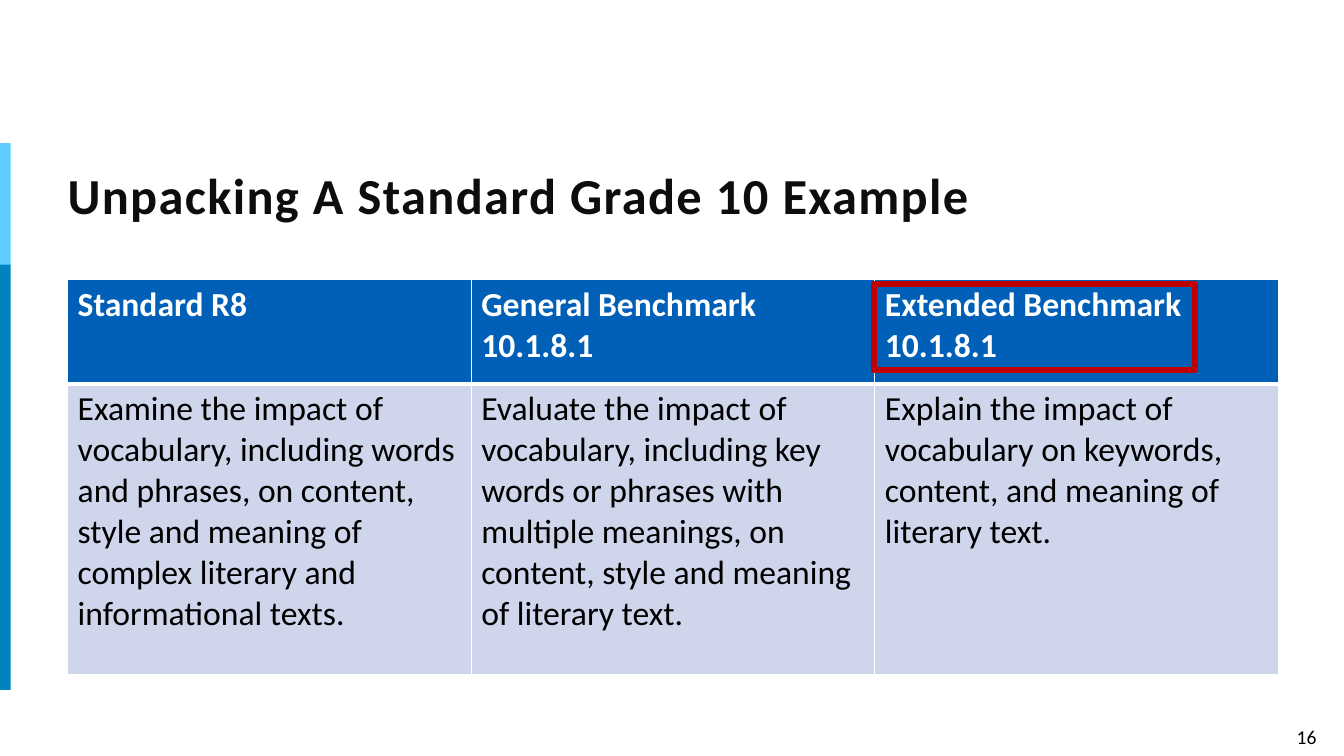
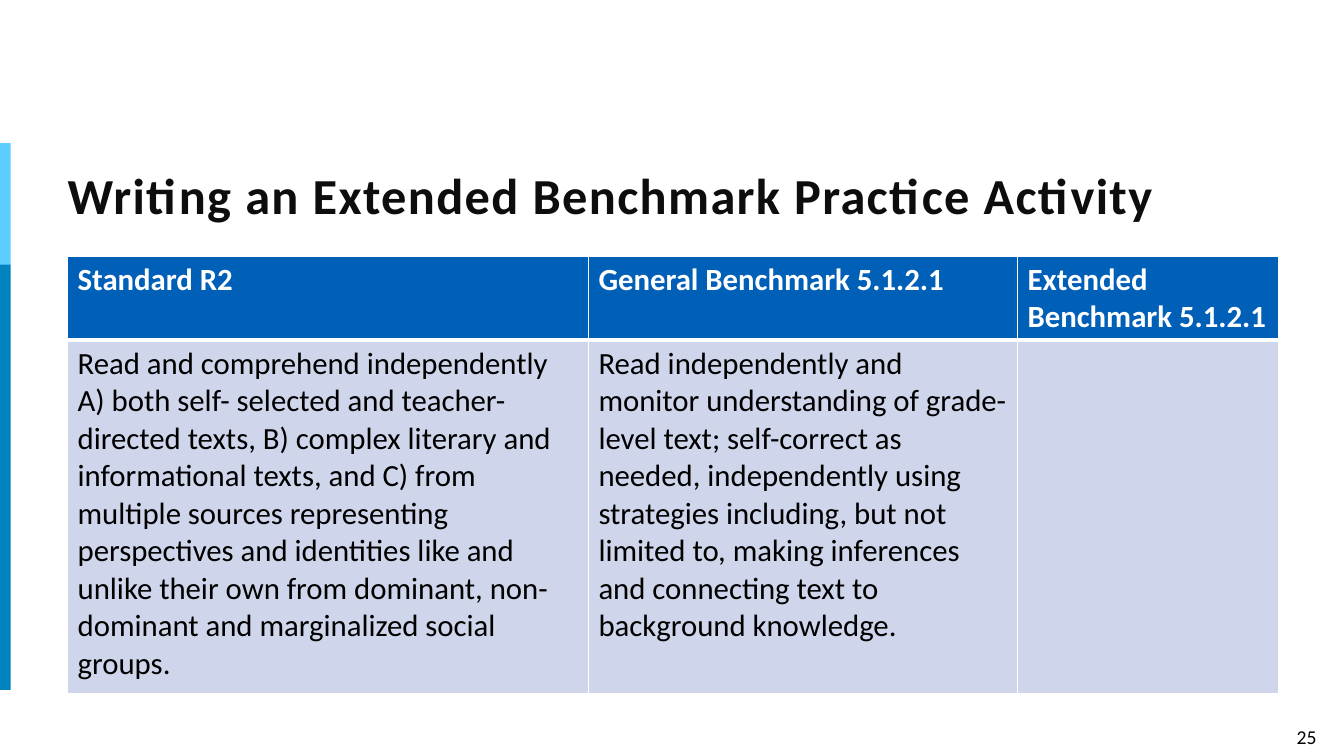
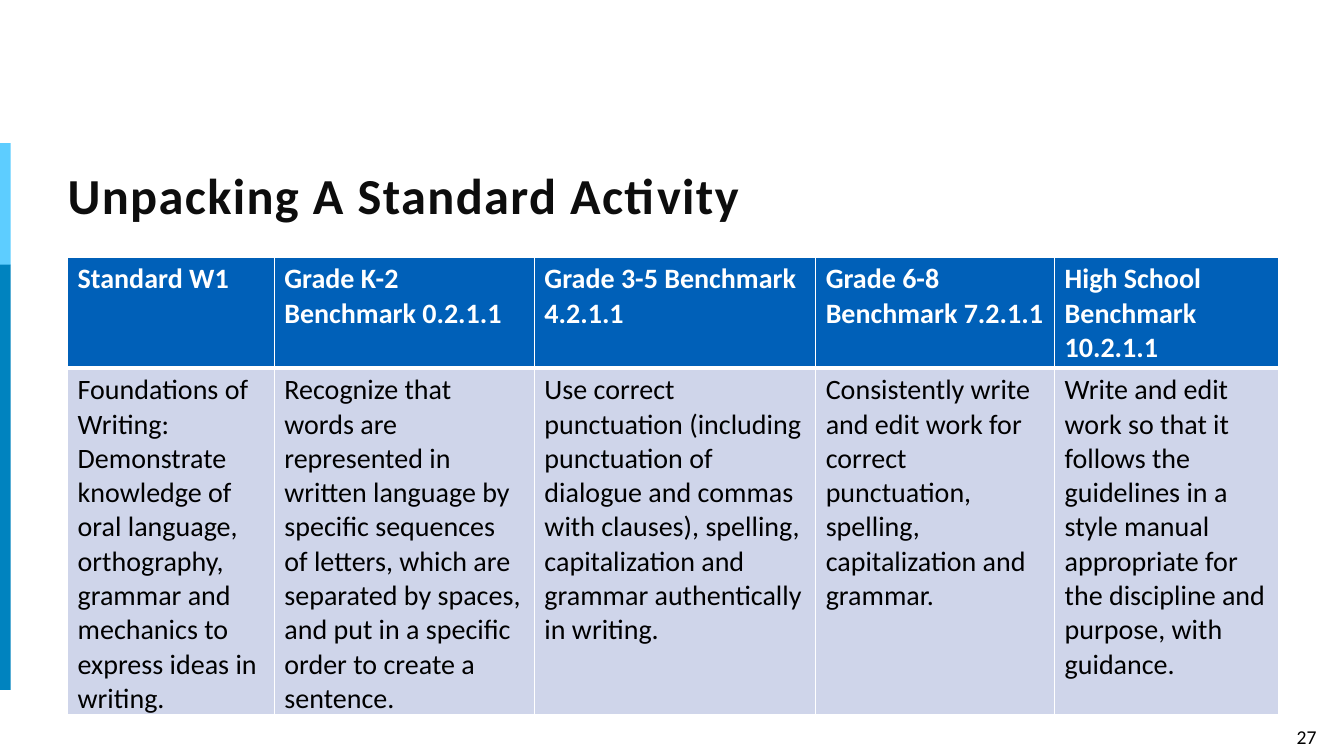
from lxml.etree import SubElement
from pptx import Presentation
from pptx.dml.color import RGBColor
from pptx.enum.shapes import MSO_SHAPE
from pptx.enum.text import MSO_ANCHOR, MSO_AUTO_SIZE, PP_ALIGN
from pptx.oxml import parse_xml
from pptx.oxml.ns import nsdecls, qn
from pptx.util import Inches, Pt

COLORS = {
    "ink": "0D0D0D", "black": "000000", "white": "FFFFFF",
    "header": "0060B8", "body": "CFD5EA", "mark": "C00000",
    "light band": "5DCDFF", "dark band": "0083BF",
}
TITLE_ONLY = 5

# Horizontal and vertical lengths are percent of the slide's width and height
LEFT, CONTENT_WIDTH = 5.03, 90.1
TITLE_CENTRE = 25.5
BAND_LEFT, BAND_WIDTH = -0.25, 1.05
BANDS = [("light band", 18.93, 16.13), ("dark band", 35, 56.27)]
NUMBER_BOX = (94.75, 95.2, 4.95, 4.53)

TITLE_FONT = {"name": "Calibri", "size": Pt(36), "bold": True}
NUMBER_FONT = {"name": "Calibri", "size": Pt(14), "bold": False}
TITLE_FRAME = {
    "auto_size": MSO_AUTO_SIZE.NONE, "word_wrap": True,
    "vertical_anchor": MSO_ANCHOR.MIDDLE,
    "margin_left": 0, "margin_top": Inches(0.2),
    "margin_right": Inches(0.1), "margin_bottom": Inches(0.05),
}


def color(name):
    return RGBColor.from_string(COLORS[name])


def set_format(target, values):
    for name, value in values.items():
        setattr(target, name, value)


class Deck:
    """Holds the shared style and the slide being built."""

    def __init__(self):
        self.presentation = Presentation()
        self.presentation.slide_width = Inches(13.33)
        self.presentation.slide_height = Inches(7.5)
        self.slide = None

    def across(self, percent):
        return round(self.presentation.slide_width * percent / 100)

    def down(self, percent):
        return round(self.presentation.slide_height * percent / 100)

    def place(self, left, top, width, height):
        return (self.across(left), self.down(top),
                self.across(width), self.down(height))

    def set_text(self, frame, text, font, font_color, **paragraph_format):
        frame.text = text
        for paragraph in frame.paragraphs:
            set_format(paragraph, paragraph_format)
            for run in paragraph.runs:
                set_format(run.font, font)
                run.font.color.rgb = color(font_color)

    def new_slide(self, title, title_height, number):
        layout = self.presentation.slide_layouts[TITLE_ONLY]
        self.slide = self.presentation.slides.add_slide(layout)
        self.page_number(number)
        for fill, top, height in BANDS:
            self.box(BAND_LEFT, top, BAND_WIDTH, height, fill=fill)
        self.title(title, title_height)

    def title(self, text, height):
        shape = self.slide.shapes.title
        position = self.place(LEFT, TITLE_CENTRE - height / 2,
                              CONTENT_WIDTH, height)
        set_format(shape, dict(zip(("left", "top", "width", "height"),
                                   position)))
        set_format(shape.text_frame, TITLE_FRAME)
        self.set_text(shape.text_frame, text, TITLE_FONT, "ink",
                      alignment=PP_ALIGN.LEFT, line_spacing=0.8)
        for run in shape.text_frame.paragraphs[0].runs:
            run.font._element.set("spc", "100")

    def page_number(self, number):
        shape = self.box(*NUMBER_BOX, line="white", line_width=0.75)
        shape.text_frame.auto_size = MSO_AUTO_SIZE.SHAPE_TO_FIT_TEXT
        self.set_text(shape.text_frame, str(number), NUMBER_FONT, "black",
                      alignment=PP_ALIGN.CENTER)

    def box(self, left, top, width, height, fill=None, line=None, line_width=1):
        shape = self.slide.shapes.add_shape(
            MSO_SHAPE.RECTANGLE, *self.place(left, top, width, height))
        shape.shadow.inherit = False
        if fill:
            shape.fill.solid()
            shape.fill.fore_color.rgb = color(fill)
        else:
            shape.fill.background()
        if line:
            shape.line.color.rgb = color(line)
            shape.line.width = Pt(line_width)
        else:
            shape.line.fill.background()
        return shape

    def table(self, top, column_weights, row_heights, rows, size):
        position = self.place(LEFT, top, CONTENT_WIDTH, sum(row_heights))
        table = self.slide.shapes.add_table(
            len(rows), len(column_weights), *position).table
        table.horz_banding = False
        for column, weight in zip(table.columns, column_weights):
            column.width = round(position[2] * weight / sum(column_weights))
        for index, (row, height, texts) in enumerate(
                zip(table.rows, row_heights, rows)):
            row.height = self.down(height)
            for cell, text in zip(row.cells, texts):
                self.cell(cell, text, size, is_header=index == 0)

    def cell(self, cell, text, size, is_header):
        cell.fill.solid()
        cell.fill.fore_color.rgb = color("header" if is_header else "body")
        font = {"name": "Calibri", "size": Pt(size), "bold": is_header}
        self.set_text(cell.text_frame, text, font,
                      "white" if is_header else "black")
        # The rule between header and body is thicker than the others
        thick = "lnB" if is_header else "lnT"
        properties = cell._tc.get_or_add_tcPr()
        for index, side in enumerate(("lnL", "lnR", "lnT", "lnB")):
            width = Pt(3 if side == thick else 1)
            border = parse_xml(f'<a:{side} {nsdecls("a")} w="{width}"/>')
            fill = SubElement(border, qn("a:solidFill"))
            SubElement(fill, qn("a:srgbClr"), val=COLORS["white"])
            properties.insert(index, border)


def main():
    deck = Deck()

    # Grade 10 example, with the extended benchmark marked
    deck.new_slide("Unpacking A Standard Grade 10 Example", 17.2, 16)
    deck.table(36.93, (1, 1, 1), (13.87, 38.4), [
        ("Standard R8", "General Benchmark 10.1.8.1",
         "Extended Benchmark 10.1.8.1"),
        ("Examine the impact of vocabulary, including words and phrases, on "
         "content, style and meaning of complex literary and informational "
         "texts.",
         "Evaluate the impact of vocabulary, including key words or phrases "
         "with multiple meanings, on content, style and meaning of literary "
         "text.",
         "Explain the impact of vocabulary on keywords, content, and meaning "
         "of literary text."),
    ], size=24)
    deck.box(65.04, 37.6, 23.86, 11.33, line="mark", line_width=4)

    # Practice activity, with an empty cell to fill in
    deck.new_slide("Writing an Extended Benchmark Practice Activity", 11.07, 25)
    deck.table(33.87, (5.17, 4.26, 2.59), (10.4, 46.8), [
        ("Standard R2", "General Benchmark 5.1.2.1",
         "Extended Benchmark 5.1.2.1"),
        ("Read and comprehend independently A) both self- selected and "
         "teacher-directed texts, B) complex literary and informational "
         "texts, and C) from multiple sources representing perspectives and "
         "identities like and unlike their own from dominant, non-dominant "
         "and marginalized social groups.",
         "Read independently and monitor understanding of grade-level text; "
         "self-correct as needed, independently using strategies including, "
         "but not limited to, making inferences and connecting text to "
         "background knowledge.",
         ""),
    ], size=22)

    # Benchmarks across the grades
    deck.new_slide("Unpacking A Standard Activity", 15.2, 27)
    deck.table(34, (2.05, 2.58, 2.79, 2.37, 2.22), (14.27, 45.73), [
        ("Standard W1", "Grade K-2\nBenchmark 0.2.1.1",
         "Grade 3-5 Benchmark 4.2.1.1", "Grade 6-8 Benchmark 7.2.1.1",
         "High School Benchmark 10.2.1.1"),
        ("Foundations of Writing: Demonstrate knowledge of oral language, "
         "orthography, grammar and mechanics to express ideas in writing.",
         "Recognize that words are represented in written language by "
         "specific sequences of letters, which are separated by spaces, and "
         "put in a specific order to create a sentence.",
         "Use correct punctuation (including punctuation of dialogue and "
         "commas with clauses), spelling, capitalization and grammar "
         "authentically in writing.",
         "Consistently write and edit work for correct punctuation, "
         "spelling, capitalization and grammar.",
         "Write and edit work so that it follows the guidelines in a style "
         "manual appropriate for the discipline and purpose, with guidance."),
    ], size=20)

    deck.presentation.save("out.pptx")


if __name__ == "__main__":
    main()
